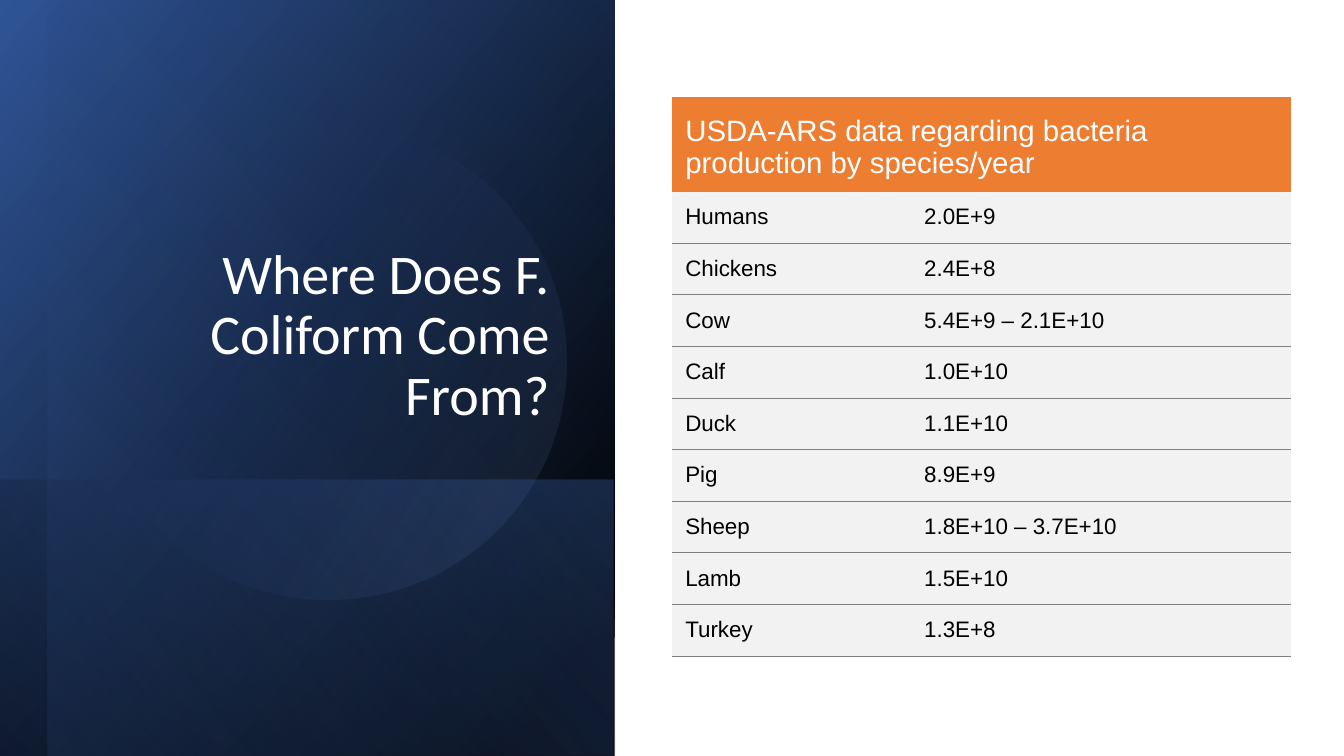
from lxml import etree
from pptx import Presentation
from pptx import util as u
from pptx.dml.color import RGBColor
from pptx.enum import shapes, text
from pptx.oxml import parse_xml
from pptx.oxml.ns import nsdecls, qn

COLORS = {
    "black": "000000", "white": "FFFFFF", "navy": "2F5496", "blue": "4472C4",
    "pale": "8DA9DB", "orange": "ED7D31", "row": "F2F2F2", "rule": "7F7F7F",
}
NO_GRID_STYLE = "{2D5ABB26-0587-4C30-8999-92F81FD0307C}"


def add_glow(slide, kind, box, rotation, flipped, angle, stops):
    """Add a rotated shape with a gradient of (position, colour, opacity) stops."""
    shape = slide.shapes.add_shape(kind, *map(u.Cm, box))
    shape.rotation = rotation
    shape.shadow.inherit = False
    shape.line.fill.background()
    properties = shape._element.spPr
    if flipped:
        properties.find(qn("a:xfrm")).set("flipH", "1")
    marks = "".join(
        f'<a:gs pos="{position * 1000}"><a:srgbClr val="{COLORS[color]}">'
        f'<a:alpha val="{opacity * 1000}"/></a:srgbClr></a:gs>'
        for position, color, opacity in stops)
    gradient = parse_xml(
        f'<a:gradFill {nsdecls("a")} rotWithShape="1"><a:gsLst>{marks}</a:gsLst>'
        f'<a:lin ang="{angle * 60000}" scaled="0"/></a:gradFill>')
    properties.find(qn("a:prstGeom")).addnext(gradient)


def style_text(frame, font, size, color):
    for para in frame.paragraphs:
        for span in para.runs:
            span.font.name = font
            span.font.size = u.Pt(size)
            span.font.bold = False
            span.font.color.rgb = RGBColor.from_string(COLORS[color])


deck = Presentation()
deck.slide_width, deck.slide_height = u.Cm(33.87), u.Cm(19.05)
slide = deck.slides.add_slide(deck.slide_layouts[5])

# Left panel
RECT, OVAL = shapes.MSO_SHAPE.RECTANGLE, shapes.MSO_SHAPE.OVAL
glows = [
    (RECT, (-1.78, 1.78, 19.05, 15.49), 90, True, 50,
     [(0, "black", 100), (8, "black", 100), (100, "navy", 100)]),
    (RECT, (4.24, 7.82, 6.96, 15.49), 90, True, 130,
     [(0, "blue", 29), (2, "blue", 29), (100, "black", 30)]),
    (RECT, (-1.17, 2.36, 19.05, 14.3), 90, True, 130,
     [(0, "black", 0), (99, "blue", 11), (100, "blue", 11)]),
    (OVAL, (2.29, 3.12, 11.99, 11.99), 101.6, False, 290,
     [(0, "blue", 0), (39, "blue", 0), (100, "pale", 15)]),
]
for glow in glows:
    add_glow(slide, *glow)

# Title, in front of the panel
title = slide.shapes.title
title.left, title.top = u.Cm(1.83), u.Cm(2.49)
title.width, title.height = u.Cm(12.27), u.Cm(8.41)
frame = title.text_frame
frame.text = "Where Does F. Coliform Come From?"
frame.word_wrap = True
frame.auto_size = text.MSO_AUTO_SIZE.NONE
frame.vertical_anchor = text.MSO_ANCHOR.BOTTOM
frame.paragraphs[0].alignment = text.PP_ALIGN.RIGHT
frame.paragraphs[0].line_spacing = 0.9
style_text(frame, "Calibri", 40, "white")
slide.shapes._spTree.append(title._element)

# Bacteria table
heading = "USDA-ARS data regarding bacteria production by species/year"
production = [
    ("Humans", "2.0E+9"),
    ("Chickens", "2.4E+8"),
    ("Cow", "5.4E+9 – 2.1E+10"),
    ("Calf", "1.0E+10"),
    ("Duck", "1.1E+10"),
    ("Pig", "8.9E+9"),
    ("Sheep", "1.8E+10 – 3.7E+10"),
    ("Lamb", "1.5E+10"),
    ("Turkey", "1.3E+8"),
]
widths, head_height, row_height = (6.02, 9.58), 2.39, 1.3
table_box = (16.94, 2.44, sum(widths), head_height + row_height * len(production))
table = slide.shapes.add_table(
    len(production) + 1, 2, *map(u.Cm, table_box)).table
table._tbl.tblPr.find(qn("a:tableStyleId")).text = NO_GRID_STYLE
table.horz_banding = False
for column, width in zip(table.columns, widths):
    column.width = u.Cm(width)
table.cell(0, 0).merge(table.cell(0, 1))

for number, values in enumerate([(heading, ""), *production]):
    is_head = number == 0
    table.rows[number].height = u.Cm(head_height if is_head else row_height)
    for cell, value in zip(table.rows[number].cells, values):
        cell.margin_left = cell.margin_right = cell.margin_top = u.Cm(0.33)
        cell.margin_bottom = u.Cm(0.18)
        cell.text_frame.text = value
        if is_head:
            cell.vertical_anchor = text.MSO_ANCHOR.MIDDLE
            style_text(cell.text_frame, "Arial", 21, "white")
        else:
            style_text(cell.text_frame, "Arial", 16, "black")
            border = etree.SubElement(
                cell._tc.get_or_add_tcPr(), qn("a:lnB"), w=str(u.Pt(0.75)))
            line_fill = etree.SubElement(border, qn("a:solidFill"))
            etree.SubElement(line_fill, qn("a:srgbClr"), val=COLORS["rule"])
        cell.fill.solid()
        cell.fill.fore_color.rgb = RGBColor.from_string(
            COLORS["orange" if is_head else "row"])

deck.save("out.pptx")
